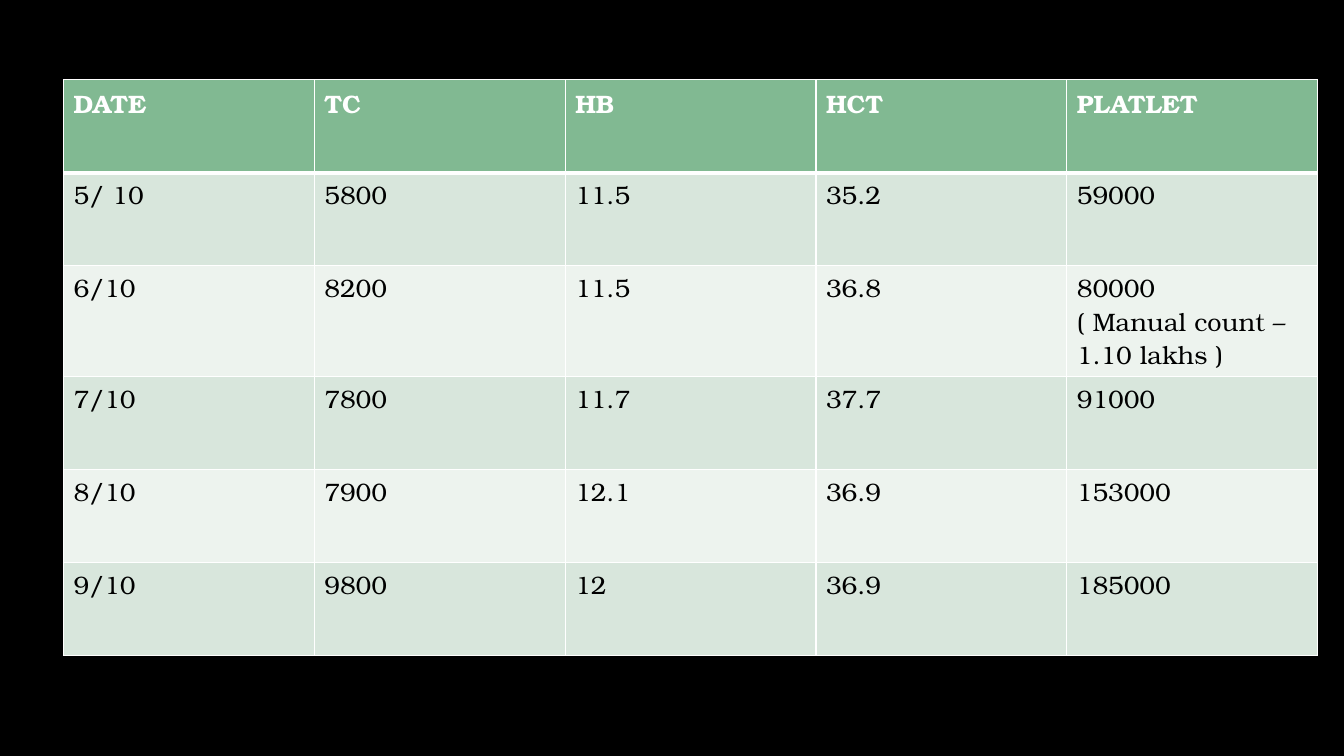
from dataclasses import dataclass

from lxml.etree import SubElement
from pptx import Presentation
from pptx.dml.color import RGBColor
from pptx.oxml.ns import qn
from pptx.util import Inches, Pt

HEADINGS = ("DATE", "TC", "HB", "HCT", "PLATLET")
BLOOD_COUNTS = (
    ("5/ 10", "5800", "11.5", "35.2", "59000"),
    ("6/10", "8200", "11.5", "36.8", "80000\n( Manual count – 1.10 lakhs )"),
    ("7/10", "7800", "11.7", "37.7", "91000"),
    ("8/10", "7900", "12.1", "36.9", "153000"),
    ("9/10", "9800", "12", "36.9", "185000"),
)


@dataclass(frozen=True)
class Theme:
    font: str = "TeX Gyre Bonum"
    size: int = 18
    background: str = "000000"
    heading_fill: str = "81B992"
    heading_text: str = "FFFFFF"
    body_text: str = "000000"
    bands: tuple = ("D8E6DC", "EDF3EE")
    border: str = "FFFFFF"
    thin: int = 1
    thick: int = 3


THEME = Theme()
SLIDE_WIDTH, SLIDE_HEIGHT = 13.33, 7.5
TABLE_LEFT, TABLE_TOP = 0.63, 0.79
COLUMN_WIDTH, ROW_HEIGHT = 2.488, 0.923


def add_borders(cell, top, bottom):
    """Draw the four sides; the schema wants them before the cell's fill."""
    properties = cell._tc.get_or_add_tcPr()
    widths = {"a:lnL": THEME.thin, "a:lnR": THEME.thin, "a:lnT": top, "a:lnB": bottom}
    for side, width in widths.items():
        line = SubElement(properties, qn(side), w=str(Pt(width)))
        fill = SubElement(line, qn("a:solidFill"))
        SubElement(fill, qn("a:srgbClr"), val=THEME.border)


def fill_cell(cell, content, row):
    is_heading = row == 0
    add_borders(
        cell,
        top=THEME.thick if row == 1 else THEME.thin,
        bottom=THEME.thick if is_heading else THEME.thin,
    )
    band = THEME.bands[(row - 1) % len(THEME.bands)]
    cell.fill.solid()
    cell.fill.fore_color.rgb = RGBColor.from_string(
        THEME.heading_fill if is_heading else band
    )
    cell.text_frame.text = content
    for paragraph in cell.text_frame.paragraphs:
        for run in paragraph.runs:
            run.font.name = THEME.font
            run.font.size = Pt(THEME.size)
            run.font.bold = is_heading
            run.font.color.rgb = RGBColor.from_string(
                THEME.heading_text if is_heading else THEME.body_text
            )


def main():
    deck = Presentation()
    deck.slide_width, deck.slide_height = Inches(SLIDE_WIDTH), Inches(SLIDE_HEIGHT)
    slide = deck.slides.add_slide(deck.slide_layouts[6])
    slide.background.fill.solid()
    slide.background.fill.fore_color.rgb = RGBColor.from_string(THEME.background)

    records = (HEADINGS, *BLOOD_COUNTS)
    table = slide.shapes.add_table(
        len(records), len(HEADINGS),
        Inches(TABLE_LEFT), Inches(TABLE_TOP),
        Inches(COLUMN_WIDTH * len(HEADINGS)), Inches(ROW_HEIGHT * len(records)),
    ).table
    for row, record in enumerate(records):
        for column, content in enumerate(record):
            fill_cell(table.cell(row, column), content, row)
    deck.save("out.pptx")


if __name__ == "__main__":
    main()
